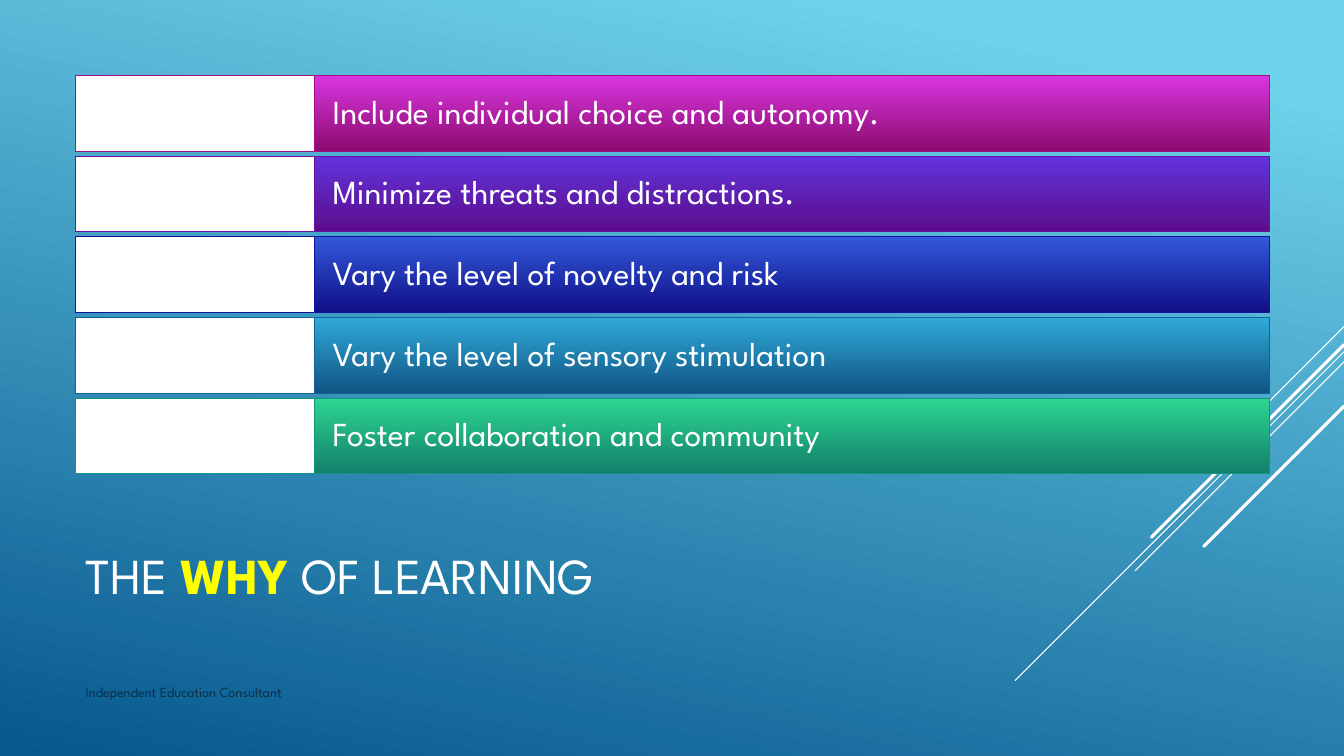
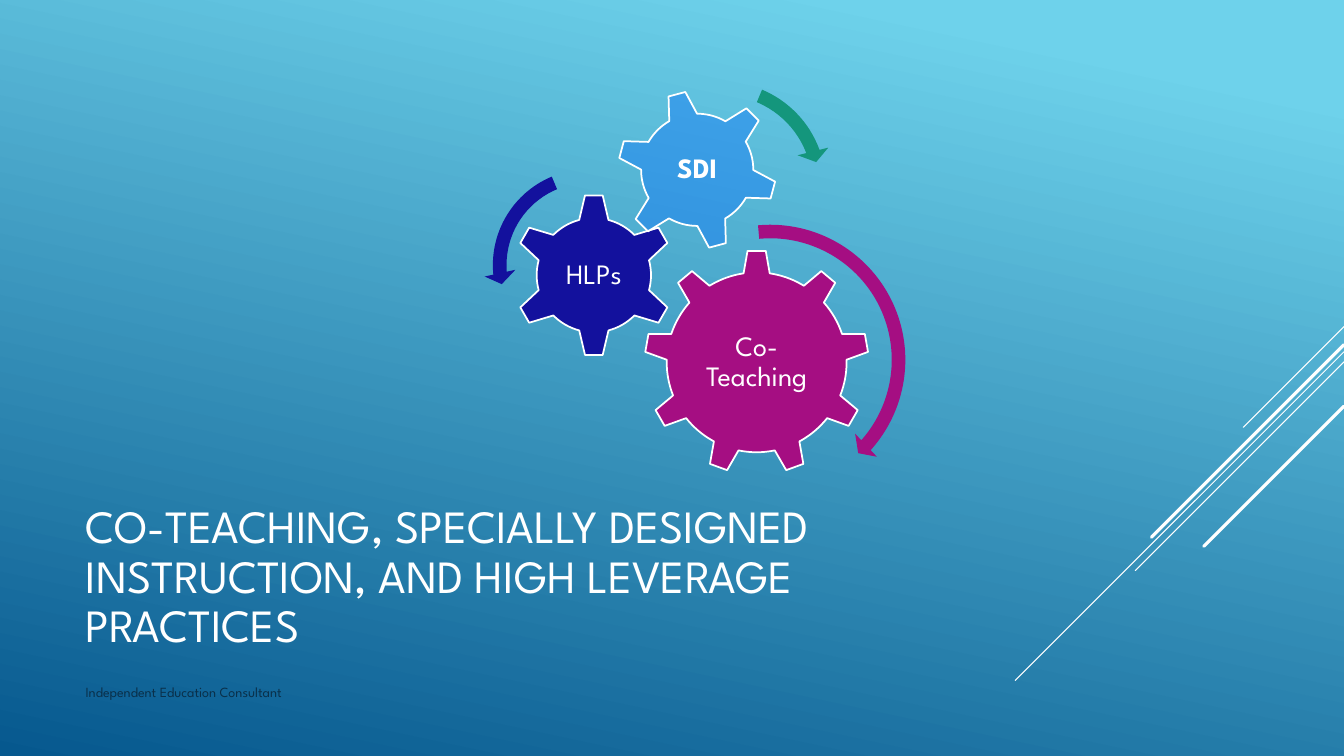
import lxml.etree
import pptx
import pptx.dml.color
import pptx.enum.shapes
import pptx.enum.text
import pptx.oxml.ns
import pptx.util
from dataclasses import dataclass

SHAPE = pptx.enum.shapes.MSO_SHAPE
ALIGN = pptx.enum.text.PP_ALIGN
ANCHOR = pptx.enum.text.MSO_ANCHOR
qn = pptx.oxml.ns.qn
SCALE = 9144  # EMU per px, 100 px to the inch


@dataclass(frozen=True)
class Theme:
    font: str = "League Spartan"
    white: str = "FFFFFF"
    accent: str = "FFFF00"
    foot: str = "0A304A"
    sky: tuple = ("6ED2EB", "06588E")
    pink: str = "A50E82"
    navy: str = "13119D"
    blue: str = "167BF3"
    green: str = "14967C"
    title_size: int = 36
    long_size: int = 33
    row_size: int = 24
    gear_size: int = 20
    foot_size: int = 10
    thin: float = 0.75
    edge: float = 1.25
    thick: float = 2.25


T = Theme()
WIDE, HIGH = 1333, 750
FOOTER = "Independent Education Consultant"
TITLE_BOX = (75, 491, 933, 165)
FOOT_BOX = (75, 675, 825, 40)

# Diagonal rays from the right edge: start height, run, weight
RAYS = [
    (324, 100, T.thin),
    (349, 326, T.thin),
    (359, 207, T.thin),
    (342, 191, T.thick),
    (403, 139, T.thick),
]

WHY_TITLE = [("THE ", False), ("WHY", True), (" OF LEARNING", False)]
# Text, gradient top, gradient bottom, outline
ROWS = [
    ("Include individual choice and autonomy.", "D835DF", "8D0C6F", T.pink),
    ("Minimize threats and distractions.", "6233DC", "5B0D8A", "6A10A1"),
    ("Vary the level of novelty and risk", "3159DA", "110F87", T.navy),
    ("Vary the level of sensory stimulation", "2FAAD8", "105484", "13639A"),
    ("Foster collaboration and community", "2ED592", "11806A", T.green),
]
ROW_LEFT, ROW_TOP, ROW_HIGH, ROW_STEP = 75, 75, 75, 80
TAB_WIDE, BAR_WIDE = 237, 947

GEAR_TITLE = [
    ("CO-TEACHING, SPECIALLY DESIGNED INSTRUCTION, "
     "AND HIGH LEVERAGE PRACTICES", False),
]
# Text, kind, left, top, size, turn, colour, opacity in percent, bold
GEARS = [
    ("Co-Teaching", SHAPE.GEAR_9, 639, 248, 223, 0, T.pink, 100, False),
    ("HLPs", SHAPE.GEAR_6, 508, 192, 162, 0, T.navy, 100, False),
    ("SDI", SHAPE.GEAR_6, 612, 89, 159, 345, T.blue, 47, True),
]
# Kind, left, top, size, turn, colour, band percent, three angles, head percent
ARROWS = [
    (SHAPE.CIRCULAR_ARROW, 621, 214, 286, 0, T.pink,
     4.7, (4.98, 41.73, 264.81), 5.5),
    (SHAPE.LEFT_CIRCULAR_ARROW, 480, 159, 208, 0, T.navy,
     6.5, (7.17, 174.82, 247.3), 7.5),
    (SHAPE.CIRCULAR_ARROW, 604, 72, 224, 117.6, T.green,
     6, (6.57, 221.9, 175.14), 7),
]


def px(*vals):
    return [pptx.util.Emu(round(val * SCALE)) for val in vals]


def rgb(code):
    return pptx.dml.color.RGBColor.from_string(code)


def blend(fill, stops, angle):
    """Fill with a gradient; stops are (position, colour), angle is clockwise."""
    fill.gradient()
    fill.gradient_angle = 360 - angle
    for stop, (place, code) in zip(fill.gradient_stops, stops):
        stop.position = place
        stop.color.rgb = rgb(code)


def write(shape, runs, size, color=T.white, bold=False, align=ALIGN.LEFT,
          anchor=ANCHOR.MIDDLE, pad=(10, 5)):
    """Set one paragraph of (text, accented) runs in a shape."""
    frame = shape.text_frame
    frame.word_wrap = True
    frame.vertical_anchor = anchor
    frame.margin_left = frame.margin_right = px(pad[0])[0]
    frame.margin_top = frame.margin_bottom = px(pad[1])[0]
    para = frame.paragraphs[0]
    para.alignment = align
    para.line_spacing = 0.9
    font = para.font
    font.name, font.size, font.bold = T.font, pptx.util.Pt(size), bold
    font.color.rgb = rgb(color)
    for text, accent in runs:
        run = para.add_run()
        run.text = text
        if accent:
            run.font.bold = True
            run.font.color.rgb = rgb(T.accent)


def draw(slide, kind, box, fill=None, line=None, weight=T.thin):
    """Add a flat preset shape; without a line colour it has no outline."""
    shape = slide.shapes.add_shape(kind, *px(*box))
    shape.shadow.inherit = False
    if fill:
        shape.fill.solid()
        shape.fill.fore_color.rgb = rgb(fill)
    if line:
        shape.line.color.rgb = rgb(line)
        shape.line.width = pptx.util.Pt(weight)
    else:
        shape.line.fill.background()
    return shape


def fade(shape, percent):
    color = next(shape._element.spPr.iter(qn("a:srgbClr")))
    lxml.etree.SubElement(color, qn("a:alpha"), val=str(percent * 1000))


def add_ray(slide, top, run, weight):
    ray = slide.shapes.add_connector(
        pptx.enum.shapes.MSO_CONNECTOR.STRAIGHT,
        *px(WIDE, top, WIDE - run, top + run))
    ray.line.color.rgb = rgb(T.white)
    ray.line.width = pptx.util.Pt(weight)
    ray.line._get_or_add_ln().set("cap", "rnd")
    lxml.etree.SubElement(ray._element.spPr, qn("a:effectLst"))


def add_slide(deck, title, size):
    """Add a slide with the shared rays, title and footer."""
    slide = deck.slides.add_slide(deck.slide_layouts[6])
    for ray in RAYS:
        add_ray(slide, *ray)
    write(slide.shapes.add_textbox(*px(*TITLE_BOX)), title, size)
    write(slide.shapes.add_textbox(*px(*FOOT_BOX)), [(FOOTER, False)],
          T.foot_size, T.foot, anchor=ANCHOR.TOP)
    return slide


def add_rows(slide):
    for i, (text, light, dark, edge) in enumerate(ROWS):
        top = ROW_TOP + i * ROW_STEP
        bar = draw(slide, SHAPE.RECTANGLE,
                   (ROW_LEFT + TAB_WIDE, top, BAR_WIDE, ROW_HIGH), line=edge)
        blend(bar.fill, [(0, light), (1, dark)], 90)
        write(bar, [(text, False)], T.row_size, pad=(18, 18))
        draw(slide, SHAPE.RECTANGLE, (ROW_LEFT, top, TAB_WIDE, ROW_HIGH),
             T.white, edge)


def add_gears(slide):
    for text, kind, left, top, size, turn, color, alpha, bold in GEARS:
        gear = draw(slide, kind, (left, top, size, size), color, T.white, T.edge)
        gear.rotation = turn
        if alpha < 100:
            fade(gear, alpha)
        side, gap = size * 0.6, size * 0.2
        label = slide.shapes.add_textbox(*px(left + gap, top + gap, side, side))
        write(label, [(text, False)], T.gear_size, bold=bold,
              align=ALIGN.CENTER, pad=(3, 3))


def add_arrows(slide):
    for kind, left, top, size, turn, color, band, angles, head in ARROWS:
        arrow = draw(slide, kind, (left, top, size, size), color)
        arrow.rotation = turn
        # Angles are stored in 60000ths of a degree, ratios in 100000ths
        vals = [band / 100, *(angle * 0.6 for angle in angles), head / 100]
        for i, val in enumerate(vals):
            arrow.adjustments[i] = val


def main():
    deck = pptx.Presentation()
    deck.slide_width, deck.slide_height = px(WIDE, HIGH)
    blend(deck.slide_master.background.fill,
          list(zip((0.1, 1), T.sky)), 102)
    add_rows(add_slide(deck, WHY_TITLE, T.title_size))
    cogs = add_slide(deck, GEAR_TITLE, T.long_size)
    add_gears(cogs)
    add_arrows(cogs)
    deck.save("out.pptx")


if __name__ == "__main__":
    main()
